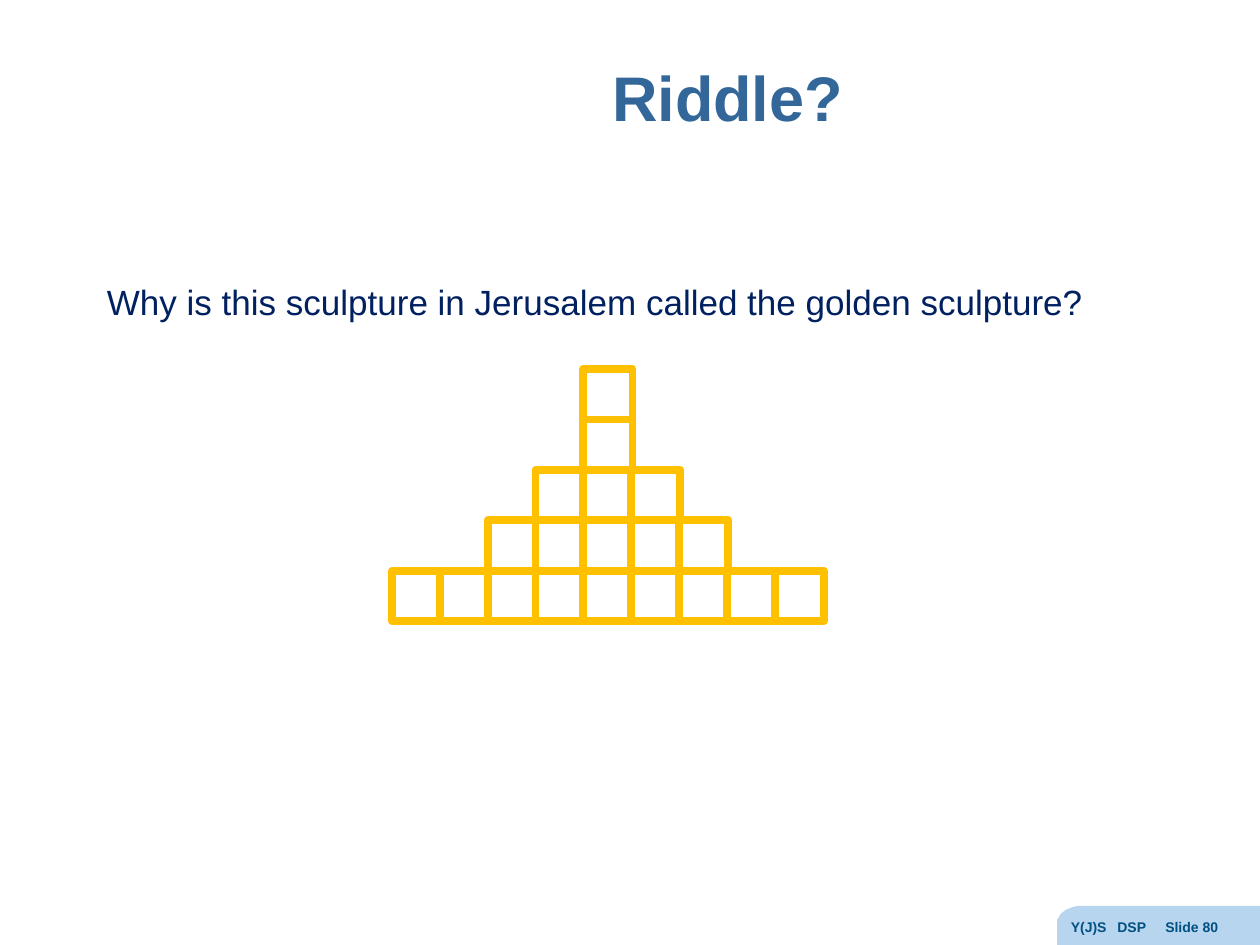
from lxml.etree import SubElement
from pptx import Presentation
from pptx.dml.color import RGBColor
from pptx.enum.shapes import MSO_SHAPE
from pptx.enum.text import MSO_ANCHOR, PP_ALIGN
from pptx.oxml.ns import qn
from pptx.util import Inches, Pt

TITLE = "Riddle?"
QUESTION = "Why is this sculpture in Jerusalem called the golden sculpture?"
FOOTER = ["Y(J)S", "DSP", "Slide 80"]
FOOTER_TABS = [0.37, 0.75]
BLOCKS_PER_ROW = [1, 1, 3, 5, 9]
BLOCK_WIDTH, BLOCK_HEIGHT = 0.39, 0.4
COLUMN_STEP, ROW_STEP = 0.38, 0.4
MIDDLE_LEFT, TOWER_TOP = 4.63, 2.93
FOOTER_TAB_OUTLINE = [(10, 7.19), (10, 7.5), (8.39, 7.5), (8.39, 7.34), (8.39, 7.3),
                      (8.42, 7.25), (8.46, 7.22), (8.51, 7.2), (8.55, 7.19)]


def color(value):
    return RGBColor.from_string(value)


def add_text(slide, text, box, size, fill, bold=False, anchor=MSO_ANCHOR.TOP):
    shape = slide.shapes.add_textbox(*map(Inches, box))
    frame = shape.text_frame
    frame.word_wrap = True
    frame.vertical_anchor = anchor
    paragraph = frame.paragraphs[0]
    paragraph.text = text
    font = paragraph.font
    font.name, font.size, font.bold = "Arial", Pt(size), bold
    font.color.rgb = color(fill)
    return paragraph


def add_footer(slide):
    points = [(Inches(x), Inches(y)) for x, y in FOOTER_TAB_OUTLINE]
    builder = slide.shapes.build_freeform(*points[0])
    builder.add_line_segments(points[1:], close=True)
    shape = builder.convert_to_shape()
    shape.shadow.inherit = False
    shape.fill.solid()
    shape.fill.fore_color.rgb = color("B7D5EF")
    shape.line.fill.background()

    paragraph = add_text(slide, "\t".join(FOOTER), (8.4, 7.24, 1.6, 0.26), 8, "005081", bold=True)
    properties = paragraph._p.get_or_add_pPr()
    tab_list = properties.makeelement(qn("a:tabLst"), {})
    properties.insert(0, tab_list)
    for position in FOOTER_TABS:
        SubElement(tab_list, qn("a:tab"), pos=str(int(Inches(position))), algn="l")


def add_block(shapes, left, top):
    block = shapes.add_shape(MSO_SHAPE.RECTANGLE, Inches(left), Inches(top),
                             Inches(BLOCK_WIDTH), Inches(BLOCK_HEIGHT))
    block.shadow.inherit = False
    block.fill.solid()
    block.fill.fore_color.rgb = color("FFFFFF")
    block.line.color.rgb = color("FFC000")
    block.line.width = Pt(4.5)
    SubElement(block.line._get_or_add_ln(), qn("a:round"))


def add_sculpture(slide):
    shapes = slide.shapes.add_group_shape().shapes
    for row, count in enumerate(BLOCKS_PER_ROW):
        for column in range(count):
            offset = column - count // 2
            add_block(shapes, MIDDLE_LEFT + offset * COLUMN_STEP, TOWER_TOP + row * ROW_STEP)


def main():
    """Build the golden sculpture riddle slide."""
    presentation = Presentation()
    presentation.slide_width, presentation.slide_height = Inches(10), Inches(7.5)
    slide = presentation.slides.add_slide(presentation.slide_layouts[6])
    add_footer(slide)
    title = add_text(slide, TITLE, (2.12, 0.18, 7.31, 1.25), 36, "336699", True, MSO_ANCHOR.MIDDLE)
    title.alignment = PP_ALIGN.CENTER
    title.line_spacing = 0.9
    question = add_text(slide, QUESTION, (0.75, 2.18, 8.5, 1.34), 20, "002060")
    question.space_before = Pt(6)
    add_sculpture(slide)
    presentation.save("out.pptx")


if __name__ == "__main__":
    main()
